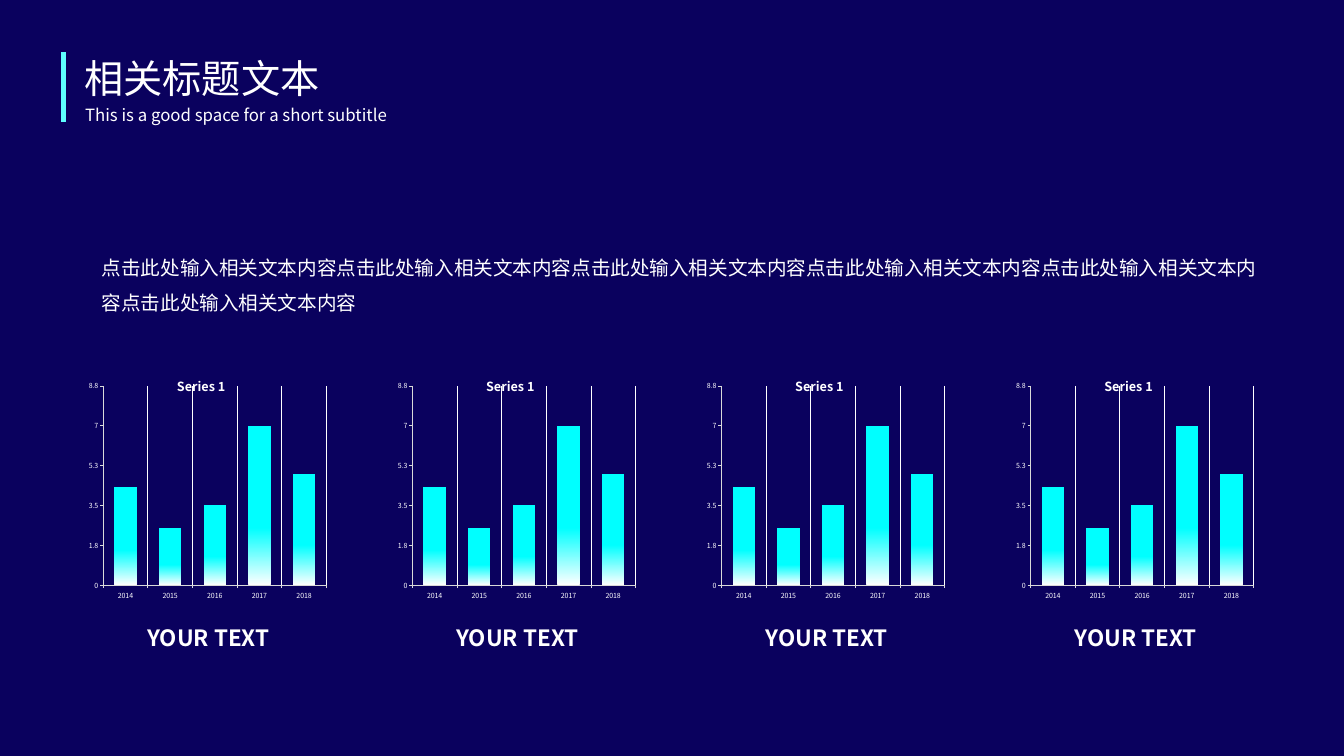
from lxml import etree
from pptx import Presentation
from pptx.chart.data import CategoryChartData
from pptx.dml.color import RGBColor
from pptx.enum.chart import XL_CHART_TYPE, XL_TICK_LABEL_POSITION, XL_TICK_MARK
from pptx.enum.shapes import MSO_CONNECTOR
from pptx.enum.text import MSO_ANCHOR, MSO_AUTO_SIZE, PP_ALIGN
from pptx.oxml import parse_xml
from pptx.oxml.ns import nsdecls, qn
from pptx.util import Cm, Pt

NAVY = RGBColor(0x0A, 0x01, 0x5E)
WHITE = RGBColor(0xFF, 0xFF, 0xFF)
CYAN = RGBColor(0x00, 0xFF, 0xFF)
ACCENT = RGBColor(0x5E, 0xFF, 0xFF)
GREY = RGBColor(0xD9, 0xD9, 0xD9)
FONT = "Noto Sans CJK SC"
COLUMN = XL_CHART_TYPE.COLUMN_CLUSTERED
LOW = XL_TICK_LABEL_POSITION.LOW
OUTSIDE = XL_TICK_MARK.OUTSIDE
LEFT, CENTER = PP_ALIGN.LEFT, PP_ALIGN.CENTER

TITLE = "相关标题文本"
SUBTITLE = "This is a good space for a short subtitle"
BODY = "点击此处输入相关文本内容" * 6
CAPTION = "YOUR TEXT"
YEARS = ["2014", "2015", "2016", "2017", "2018"]
VALUES = [4.3, 2.5, 3.5, 7, 4.9]
CHART_COUNT = 4
CHART_LEFT, CHART_PITCH = 3.28, 15.58
CAPTION_OFFSET = 3.68


def place(sp, left, top, width, height):
    sp.left, sp.top, sp.width, sp.height = map(Cm, (left, top, width, height))


def write(sp, text, size, bold=False, align=LEFT, spacing=1.0, wrap=True,
          anchor=MSO_ANCHOR.TOP, inset=(0.25, 0.25)):
    tf = sp.text_frame
    tf.word_wrap = wrap
    tf.auto_size = MSO_AUTO_SIZE.NONE
    tf.vertical_anchor = anchor
    tf.margin_left = tf.margin_right = Cm(inset[0])
    tf.margin_top = tf.margin_bottom = Cm(inset[1])
    p = tf.paragraphs[0]
    p.alignment = align
    p.line_spacing = spacing
    p.space_before = Pt(0)
    r = p.add_run()
    r.text = text
    r.font.size, r.font.bold = Pt(size), bold
    r.font.name = FONT
    r.font.color.rgb = WHITE
    etree.SubElement(r.font._element, qn("a:ea"), typeface=FONT)
    return p


def add_text(s, box, text, size, **style):
    sp = s.shapes.add_textbox(0, 0, 0, 0)
    place(sp, *box)
    write(sp, text, size, **style)


def add_header(s):
    # Title, subtitle and the accent bar beside them
    place(s.shapes.title, 3.56, 2.16, 17.3, 3.86)
    write(s.shapes.title, TITLE, 56, spacing=0.9, anchor=MSO_ANCHOR.MIDDLE,
          inset=(0.69, 0.33))
    add_text(s, (4.04, 5.13, 16.61, 1.27), SUBTITLE, 24, wrap=False,
             inset=(0.25, 0.13))
    bar = s.shapes.add_connector(MSO_CONNECTOR.STRAIGHT, Cm(3.2), Cm(2.62),
                                 Cm(3.2), Cm(6.17))
    bar.line.color.rgb = ACCENT
    bar.line.width = Pt(6)
    etree.SubElement(bar._element.spPr, qn("a:effectLst"))


def add_body(s):
    sp = s.placeholders[1]
    place(sp, 4.88, 12.04, 58.83, 3.89)
    p = write(sp, BODY, 28, spacing=1.5)
    pPr = p._p.get_or_add_pPr()
    pPr.set("marL", "0")
    pPr.set("indent", "0")
    etree.SubElement(pPr, qn("a:buNone"))


def style_axis(axis):
    axis.major_tick_mark = OUTSIDE
    axis.tick_labels.font.size = Pt(10)
    axis.tick_labels.font.name = FONT
    axis.tick_labels.font.color.rgb = WHITE
    axis.format.line.color.rgb = GREY
    axis.format.line.width = Pt(1)


def set_plot_layout(chart, x, y, w, h):
    plot_area = chart._chartSpace.chart.plotArea
    for old in plot_area.findall(qn("c:layout")):
        plot_area.remove(old)
    sizes = "".join(f'<c:{k} val="{v}"/>'
                    for k, v in zip("xywh", (x, y, w, h)))
    plot_area.insert(0, parse_xml(
        f'<c:layout {nsdecls("c")}><c:manualLayout>'
        '<c:layoutTarget val="inner"/><c:xMode val="edge"/>'
        f'<c:yMode val="edge"/>{sizes}</c:manualLayout></c:layout>'))


def add_chart_title(chart, text):
    p = chart.chart_title.text_frame.paragraphs[0]
    r = p.add_run()
    r.text = text
    r.font.size, r.font.bold, r.font.name = Pt(18), True, FONT
    r.font.color.rgb = WHITE
    title = chart.chart_title._element
    overlay = title.find(qn("c:overlay"))
    if overlay is None:
        overlay = parse_xml(f'<c:overlay {nsdecls("c")}/>')
        previous = title.find(qn("c:layout"))
        if previous is None:
            previous = title.find(qn("c:tx"))
        previous.addnext(overlay)
    overlay.set("val", "1")


def add_column_chart(s, left):
    data = CategoryChartData()
    data.categories = YEARS
    data.add_series("Series 1", VALUES)
    chart = s.shapes.add_chart(COLUMN, Cm(left), Cm(18.42), Cm(13.72),
                               Cm(12.88), data).chart
    chart.has_legend = False
    chart.font.size, chart.font.name = Pt(10), FONT
    add_chart_title(chart, "Series 1")
    set_plot_layout(chart, 0.14, 0.08, 0.82, 0.78)

    # Axes, with one vertical grid line per category
    years, values = chart.category_axis, chart.value_axis
    style_axis(years)
    style_axis(values)
    years.tick_label_position = LOW
    years.has_major_gridlines = True
    years.major_gridlines.format.line.color.rgb = WHITE
    years.major_gridlines.format.line.width = Pt(1)
    values.has_major_gridlines = False
    values.minimum_scale, values.maximum_scale = 0, 8.75
    values.major_unit = 1.75
    values.tick_labels.number_format = "0.#"
    values.tick_labels.number_format_is_linked = False

    # Columns fade to white at the foot
    plot = chart.plots[0]
    plot.gap_width = 100
    plot.vary_by_categories = False
    fill = plot.series[0].format.fill
    fill.gradient()
    fill.gradient_angle = 90
    stops = zip(fill.gradient_stops, (0, 0.36), (WHITE, CYAN))
    for stop, position, color in stops:
        stop.position = position
        stop.color.rgb = color


def main():
    prs = Presentation()
    prs.slide_width, prs.slide_height = Cm(67.74), Cm(38.1)
    s = prs.slides.add_slide(prs.slide_layouts[1])
    s.background.fill.solid()
    s.background.fill.fore_color.rgb = NAVY

    add_body(s)
    for i in range(CHART_COUNT):
        left = CHART_LEFT + i * CHART_PITCH
        add_column_chart(s, left)
        add_text(s, (left + CAPTION_OFFSET, 31.22, 7.09, 1.88), CAPTION, 32,
                 bold=True, align=CENTER, wrap=False)
    add_header(s)
    prs.save("out.pptx")


if __name__ == "__main__":
    main()
